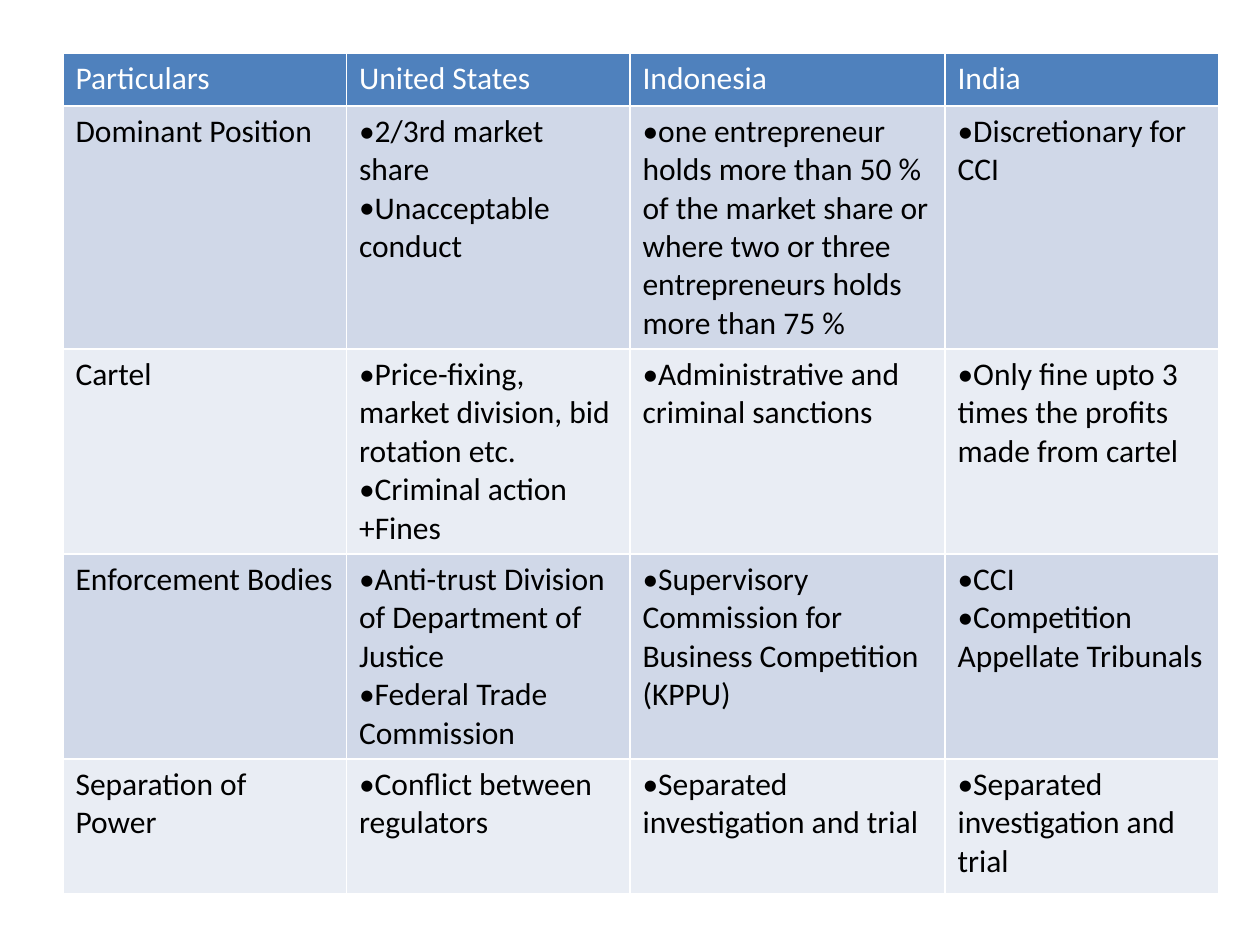
import pptx
import pptx.dml.color
import pptx.oxml.ns
import pptx.util
from lxml import etree

SLIDE_WIDTH, SLIDE_HEIGHT = 10, 7.5
TABLE_BOX = (0.5, 0.42, 9.17, 6.58)
COLUMN_WIDTHS = (2.25, 2.25, 2.5, 2.17)
ROW_HEIGHTS = (0.42, 0.98, 0.98, 0.98, 1.07)
HEADER_FILL, BAND_FILLS = "4F81BD", ("D0D8E8", "E9EDF4")
WHITE, BLACK = "FFFFFF", "000000"
FONT = "Calibri"
TEXT_FORMAT = {"name": FONT, "size": pptx.util.Pt(18), "bold": False}

HEADINGS = ("Particulars", "United States", "Indonesia", "India")
# Each row: its topic, then the bullet points for each country.
COMPARISON = (
    ("Dominant Position",
     ("2/3rd market share", "Unacceptable conduct"),
     ("one entrepreneur holds more than 50 % of the market share or "
      "where two or three entrepreneurs holds more than 75 %",),
     ("Discretionary for CCI",)),
    ("Cartel",
     ("Price-fixing, market division, bid rotation etc.",
      "Criminal action +Fines"),
     ("Administrative and criminal sanctions",),
     ("Only fine upto 3 times the profits made from cartel",)),
    ("Enforcement Bodies",
     ("Anti-trust Division of Department of Justice",
      "Federal Trade Commission"),
     ("Supervisory Commission for Business Competition (KPPU)",),
     ("CCI", "Competition Appellate Tribunals")),
    ("Separation of Power",
     ("Conflict between regulators",),
     ("Separated investigation and trial",),
     ("Separated investigation and trial",)),
)


def rgb(hex_colour):
    return pptx.dml.color.RGBColor.from_string(hex_colour)


def add_child(parent, tag, **attributes):
    return etree.SubElement(parent, pptx.oxml.ns.qn(tag), attributes)


def set_borders(cell):
    properties = cell._tc.get_or_add_tcPr()
    for side in "LRTB":
        line = add_child(properties, f"a:ln{side}", w=str(pptx.util.Pt(1)))
        add_child(add_child(line, "a:solidFill"), "a:srgbClr", val=WHITE)


def add_bullet(paragraph):
    properties = paragraph._p.get_or_add_pPr()
    add_child(properties, "a:buFont", typeface=FONT)
    add_child(properties, "a:buChar", char="•")


def write_cell(cell, content, fill, colour):
    """Write a plain string, or a tuple of strings as bullet points."""
    set_borders(cell)
    cell.fill.solid()
    cell.fill.fore_color.rgb = rgb(fill)
    bulleted = isinstance(content, tuple)
    lines = content if bulleted else (content,)
    cell.text = "\n".join(lines)
    for paragraph in cell.text_frame.paragraphs:
        if bulleted:
            add_bullet(paragraph)
        for run in paragraph.runs:
            for attribute, value in TEXT_FORMAT.items():
                setattr(run.font, attribute, value)
            run.font.color.rgb = rgb(colour)


def add_comparison_table(slide, box):
    left, top, width, height = map(pptx.util.Inches, box)
    frame = slide.shapes.add_table(len(ROW_HEIGHTS), len(COLUMN_WIDTHS),
                                   left, top, width, height)
    table = frame.table
    table.first_row = table.horz_banding = False
    for column, column_width in zip(table.columns, COLUMN_WIDTHS):
        column.width = pptx.util.Inches(column_width)
    for row, row_height in zip(table.rows, ROW_HEIGHTS):
        row.height = pptx.util.Inches(row_height)
    frame.height = height

    for column, heading in enumerate(HEADINGS):
        write_cell(table.cell(0, column), heading, HEADER_FILL, WHITE)
    for row, contents in enumerate(COMPARISON):
        for column, content in enumerate(contents):
            write_cell(table.cell(row + 1, column), content,
                       BAND_FILLS[row % 2], BLACK)


def main():
    deck = pptx.Presentation()
    deck.slide_width = pptx.util.Inches(SLIDE_WIDTH)
    deck.slide_height = pptx.util.Inches(SLIDE_HEIGHT)
    slide = deck.slides.add_slide(deck.slide_layouts[6])
    add_comparison_table(slide, TABLE_BOX)
    deck.save("out.pptx")


if __name__ == "__main__":
    main()
